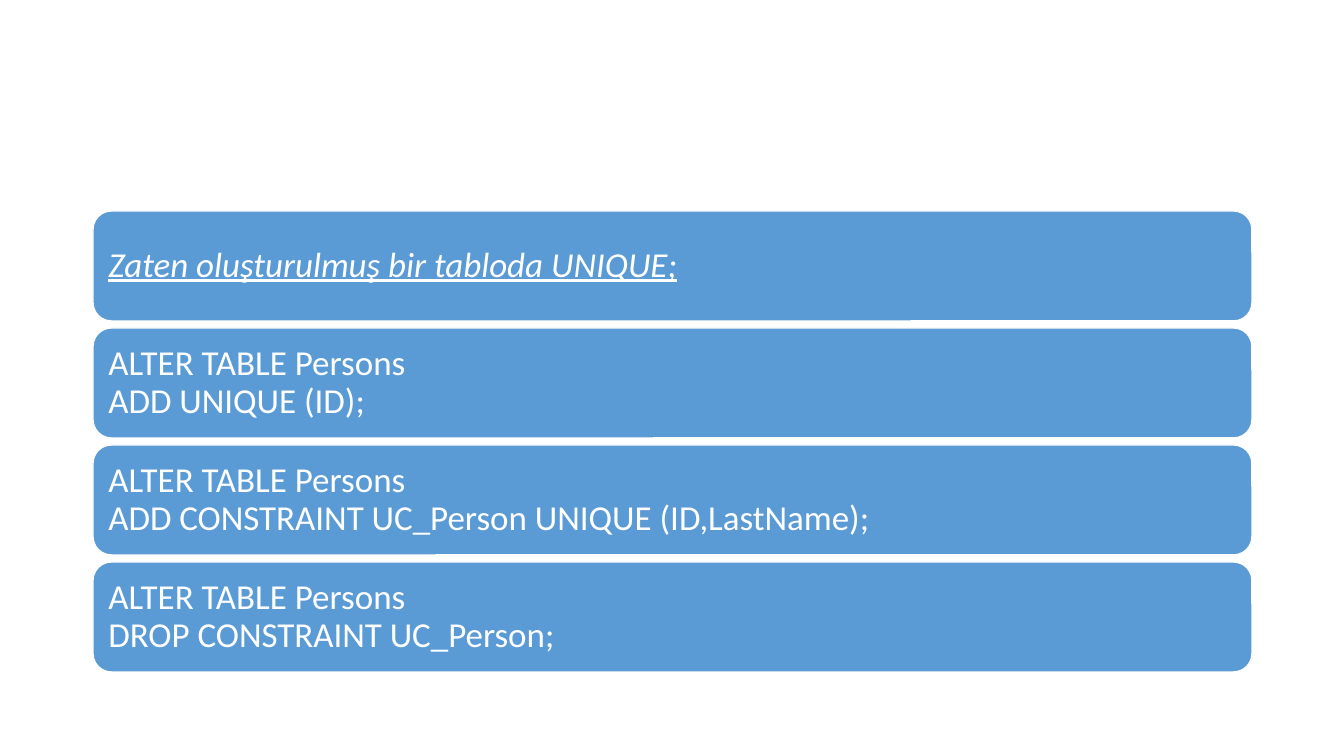
from dataclasses import dataclass

from pptx import Presentation
from pptx.dml.color import RGBColor
from pptx.enum.shapes import MSO_SHAPE
from pptx.enum.text import MSO_ANCHOR, PP_ALIGN
from pptx.slide import Slide
from pptx.util import Emu, Pt

EMU_PER_PX = 914400 / 100.8
COLORS = {"band": "5B9BD5", "outline": "FFFFFF", "text": "FFFFFF"}
LEFT, TOP, WIDTH, HEIGHT, PITCH = 93, 211, 1159, 110, 117
INSET = 10


@dataclass(frozen=True)
class Band:
    statement: str
    heading: bool = False


BANDS = (
    Band("Zaten oluşturulmuş bir tabloda UNIQUE;", heading=True),
    Band("ALTER TABLE Persons\nADD UNIQUE (ID);"),
    Band("ALTER TABLE Persons\nADD CONSTRAINT UC_Person UNIQUE (ID,LastName);"),
    Band("ALTER TABLE Persons\nDROP CONSTRAINT UC_Person;"),
)


def px(length: int) -> Emu:
    return Emu(round(length * EMU_PER_PX))


def color(part: str) -> RGBColor:
    return RGBColor.from_string(COLORS[part])


def draw_band(slide: Slide, band: Band, top: int) -> None:
    panel = slide.shapes.add_shape(
        MSO_SHAPE.ROUNDED_RECTANGLE, px(LEFT), px(top), px(WIDTH), px(HEIGHT)
    )
    panel.shadow.inherit = False
    panel.fill.solid()
    panel.fill.fore_color.rgb = color("band")
    panel.line.color.rgb = color("outline")
    panel.line.width = Pt(1)

    frame = panel.text_frame
    frame.word_wrap = True
    frame.vertical_anchor = MSO_ANCHOR.MIDDLE
    frame.margin_left = frame.margin_right = px(INSET)
    frame.margin_top = frame.margin_bottom = px(INSET)

    statement = frame.paragraphs[0]
    statement.text = band.statement
    statement.alignment = PP_ALIGN.LEFT
    statement.line_spacing = 0.9
    statement.font.name = "Calibri"
    statement.font.size = Pt(25)
    statement.font.color.rgb = color("text")
    if band.heading:
        statement.font.italic = True
        statement.font.underline = True


def main() -> None:
    """Build the slide on adding and dropping UNIQUE constraints."""
    deck = Presentation()
    deck.slide_width, deck.slide_height = px(1344), px(756)
    slide = deck.slides.add_slide(deck.slide_layouts[6])
    for row, band in enumerate(BANDS):
        draw_band(slide, band, TOP + row * PITCH)
    deck.save("out.pptx")


if __name__ == "__main__":
    main()
